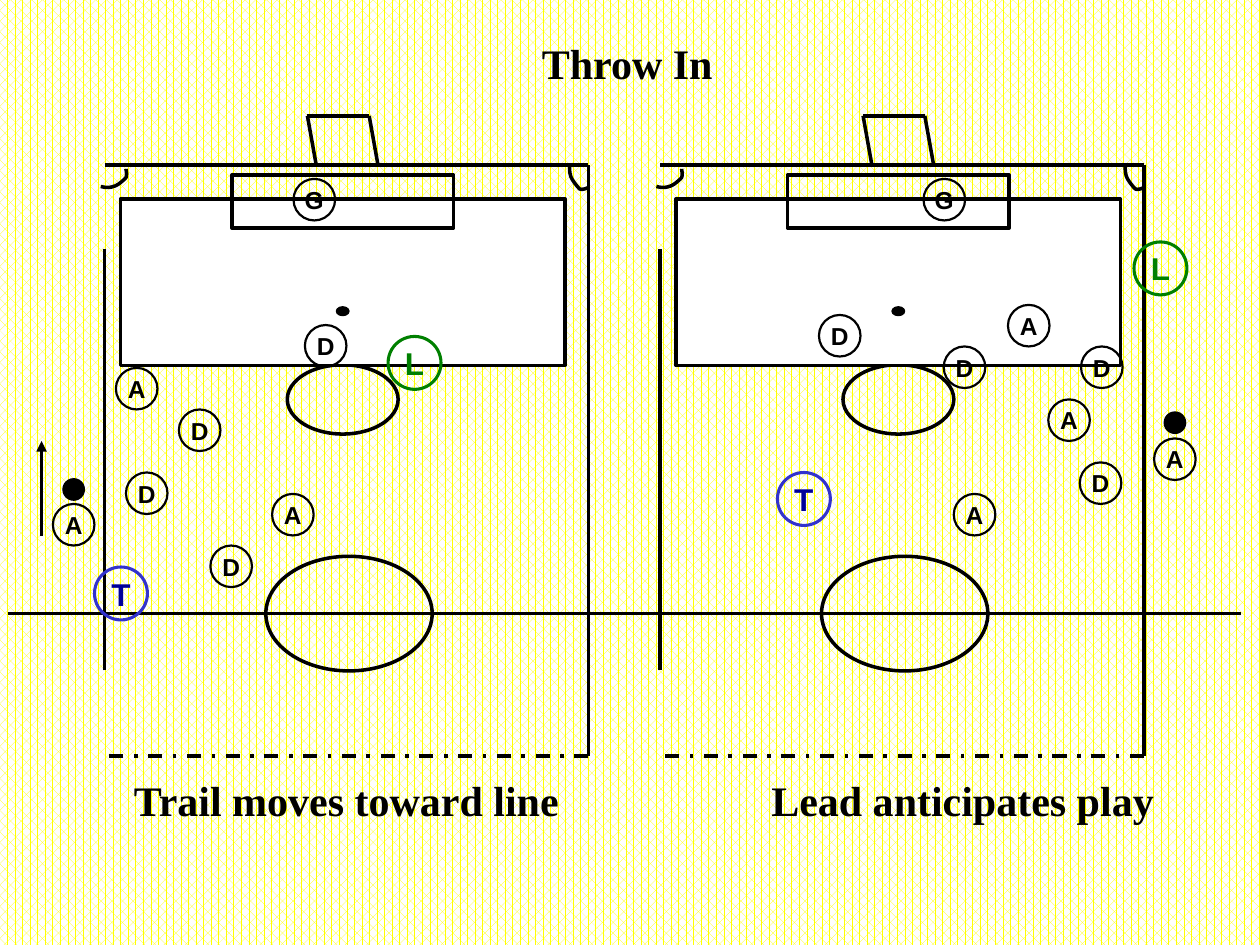
from lxml.etree import SubElement
from pptx import Presentation
from pptx.dml.color import RGBColor
from pptx.enum.dml import MSO_LINE, MSO_PATTERN
from pptx.enum.shapes import MSO_CONNECTOR, MSO_SHAPE
from pptx.enum.text import MSO_ANCHOR, MSO_AUTO_SIZE, PP_ALIGN
from pptx.oxml.ns import qn
from pptx.util import Cm, Pt

# Content: all places are inches on the slide
TITLE = ("Throw In", 4.2, 0.25, 1.56, 0.5)
CAPTIONS = [
    ("Trail moves toward line", 0.95, 6.1, 3.6, 0.5),
    ("Lead anticipates play", 6.02, 6.1, 3.24, 0.5),
]

# Left pitch; the right one is the same, shifted
PITCH_SHIFTS = [0, 4.41]
PITCH_LINES = [  # x1, y1, x2, y2, dash
    (0.83, 1.31, 4.67, 1.31, None),               # goal line
    (0.83, 5.32, 0.83, 1.98, None),               # left touchline
    (4.67, 1.31, 4.67, 6, None),                  # right touchline
    (0.06, 4.87, 5.44, 4.87, None),               # halfway line
    (2.93, 0.92, 3, 1.31, None),                  # goal posts and bar
    (2.44, 0.92, 2.51, 1.31, None),
    (2.44, 0.92, 2.93, 0.92, None),
    (4.67, 6, 0.83, 6, MSO_LINE.DASH_DOT),        # cut-off edge
]
PITCH_SHAPES = [  # preset, centre x, centre y, width, height, fill, line width
    (MSO_SHAPE.OVAL, 2.77, 4.87, 1.32, 0.91, None, 2),           # centre circle
    (MSO_SHAPE.OVAL, 2.72, 3.17, 0.88, 0.55, None, 2),           # penalty arc
    (MSO_SHAPE.RECTANGLE, 2.72, 2.24, 3.53, 1.32, "FFFFFF", 2),  # penalty area
    (MSO_SHAPE.RECTANGLE, 2.72, 1.6, 1.76, 0.42, None, 2),       # goal area
    (MSO_SHAPE.OVAL, 2.72, 2.47, 0.1, 0.07, "000000", 0.75),     # penalty spot
]
CORNER_ARCS = [  # start point, then three points for each Bezier curve
    [(0.8, 1.48), (0.84, 1.49), (0.87, 1.49), (0.9, 1.48),
     (0.94, 1.47), (0.98, 1.43), (1, 1.41), (1.01, 1.38), (1, 1.35), (1, 1.34)],
    [(4.52, 1.31), (4.52, 1.34), (4.52, 1.37), (4.53, 1.4),
     (4.54, 1.43), (4.58, 1.48), (4.6, 1.5), (4.63, 1.51), (4.66, 1.49), (4.67, 1.49)],
]

MARKERS = {  # letter: left and top of each circle
    "G": [(2.33, 1.42), (7.33, 1.42)],
    "D": [(2.42, 2.58), (1.42, 3.25), (1, 3.75), (1.67, 4.33),
          (8.57, 3.67), (6.5, 2.5), (7.49, 2.75), (8.58, 2.75)],
    "A": [(0.42, 4), (0.92, 2.92), (2.16, 3.92), (8, 2.42),
          (8.32, 3.17), (7.57, 3.92), (9.16, 3.48)],
    "L": [(3.08, 2.67), (9, 1.92)],
    "T": [(0.75, 4.5), (6.17, 3.75)],
}
PLAYER = dict(d=0.33, line="000000", width=1.25, size=14, color="000000")
STYLES = {
    "L": dict(d=0.42, line="008000", width=1.75, size=18, color="008000"),
    "T": dict(d=0.42, line="3333CC", width=1.75, size=18, color="000099"),
}
BALLS = [(0.5, 3.8), (9.24, 3.27)]
BALL_SIZE = 0.17
RUN_ARROW = (0.33, 4.25, 0.33, 3.5)


def cm(inches):
    return Cm(inches * 2.54)


def rgb(value):
    return RGBColor.from_string(value)


def write(sp, text, font="Times New Roman", size=24, color="000000",
          align=PP_ALIGN.CENTER, anchor=MSO_ANCHOR.TOP, inset=(0.1, 0.05)):
    tf = sp.text_frame
    tf.auto_size = MSO_AUTO_SIZE.NONE
    tf.word_wrap = False
    tf.vertical_anchor = anchor
    tf.margin_left = tf.margin_right = cm(inset[0])
    tf.margin_top = tf.margin_bottom = cm(inset[1])
    p = tf.paragraphs[0]
    p.alignment = align
    r = p.add_run()
    r.text = text
    r.font.name, r.font.size, r.font.bold = font, Pt(size), True
    r.font.color.rgb = rgb(color)


def style(sp, fill=None, line="000000", width=2):
    sp.shadow.inherit = False
    if fill:
        sp.fill.solid()
        sp.fill.fore_color.rgb = rgb(fill)
    else:
        sp.fill.background()
    sp.line.color.rgb = rgb(line)
    sp.line.width = Pt(width)


def add_shape(shapes, preset, x, y, w, h, **look):
    sp = shapes.add_shape(preset, cm(x), cm(y), cm(w), cm(h))
    style(sp, **look)
    return sp


def add_line(shapes, x1, y1, x2, y2, dash=None):
    ln = shapes.add_connector(MSO_CONNECTOR.STRAIGHT, cm(x1), cm(y1), cm(x2), cm(y2))
    ln.line.color.rgb = rgb("000000")
    ln.line.width = Pt(2)
    if dash:
        ln.line.dash_style = dash
    SubElement(ln._element.spPr, qn("a:effectLst"))
    return ln


def bezier(points, steps=8):
    """Points along a chain of cubic curves."""
    result = [points[0]]
    for i in range(0, len(points) - 1, 3):
        curve = points[i:i + 4]
        for n in range(1, steps + 1):
            t = n / steps
            weights = ((1 - t) ** 3, 3 * t * (1 - t) ** 2, 3 * t * t * (1 - t), t ** 3)
            result.append(tuple(sum(k * pt[axis] for k, pt in zip(weights, curve))
                                for axis in (0, 1)))
    return result


def add_pitch(slide, dx):
    shapes = slide.shapes.add_group_shape().shapes
    for x1, y1, x2, y2, dash in PITCH_LINES:
        add_line(shapes, x1 + dx, y1, x2 + dx, y2, dash)
    for preset, cx, cy, w, h, fill, width in PITCH_SHAPES:
        add_shape(shapes, preset, cx + dx - w / 2, cy - h / 2, w, h, fill=fill, width=width)
    for arc in CORNER_ARCS:
        points = [(cm(x + dx), cm(y)) for x, y in bezier(arc)]
        builder = shapes.build_freeform(*points[0])
        builder.add_line_segments(points[1:], close=False)
        style(builder.convert_to_shape())


def main():
    prs = Presentation()
    prs.slide_width, prs.slide_height = cm(10), cm(7.5)
    slide = prs.slides.add_slide(prs.slide_layouts[5])
    shapes = slide.shapes

    # Background
    fill = slide.background.fill
    fill.patterned()
    fill.pattern = MSO_PATTERN.PERCENT_60
    fill.fore_color.rgb = rgb("FFFF00")
    fill.back_color.rgb = rgb("FFFFFF")

    # Title and captions
    text, *box = TITLE
    title = shapes.title
    title.left, title.top, title.width, title.height = map(cm, box)
    write(title, text, align=PP_ALIGN.LEFT)
    for text, *box in CAPTIONS:
        write(shapes.add_textbox(*map(cm, box)), text)

    # Pitches
    for dx in PITCH_SHIFTS:
        add_pitch(slide, dx)

    # Balls, players and officials
    for x, y in BALLS:
        add_shape(shapes, MSO_SHAPE.OVAL, x, y, BALL_SIZE, BALL_SIZE,
                  fill="000000", width=0.75)
    for letter, places in MARKERS.items():
        look = STYLES.get(letter, PLAYER)
        for x, y in places:
            sp = add_shape(shapes, MSO_SHAPE.OVAL, x, y, look["d"], look["d"],
                           line=look["line"], width=look["width"])
            write(sp, letter, font="Arial", size=look["size"], color=look["color"],
                  anchor=MSO_ANCHOR.MIDDLE, inset=(0, 0))

    # Direction of the thrower's run
    arrow = add_line(shapes, *RUN_ARROW)
    SubElement(arrow.line._get_or_add_ln(), qn("a:tailEnd"), type="triangle")

    prs.save("out.pptx")


if __name__ == "__main__":
    main()
